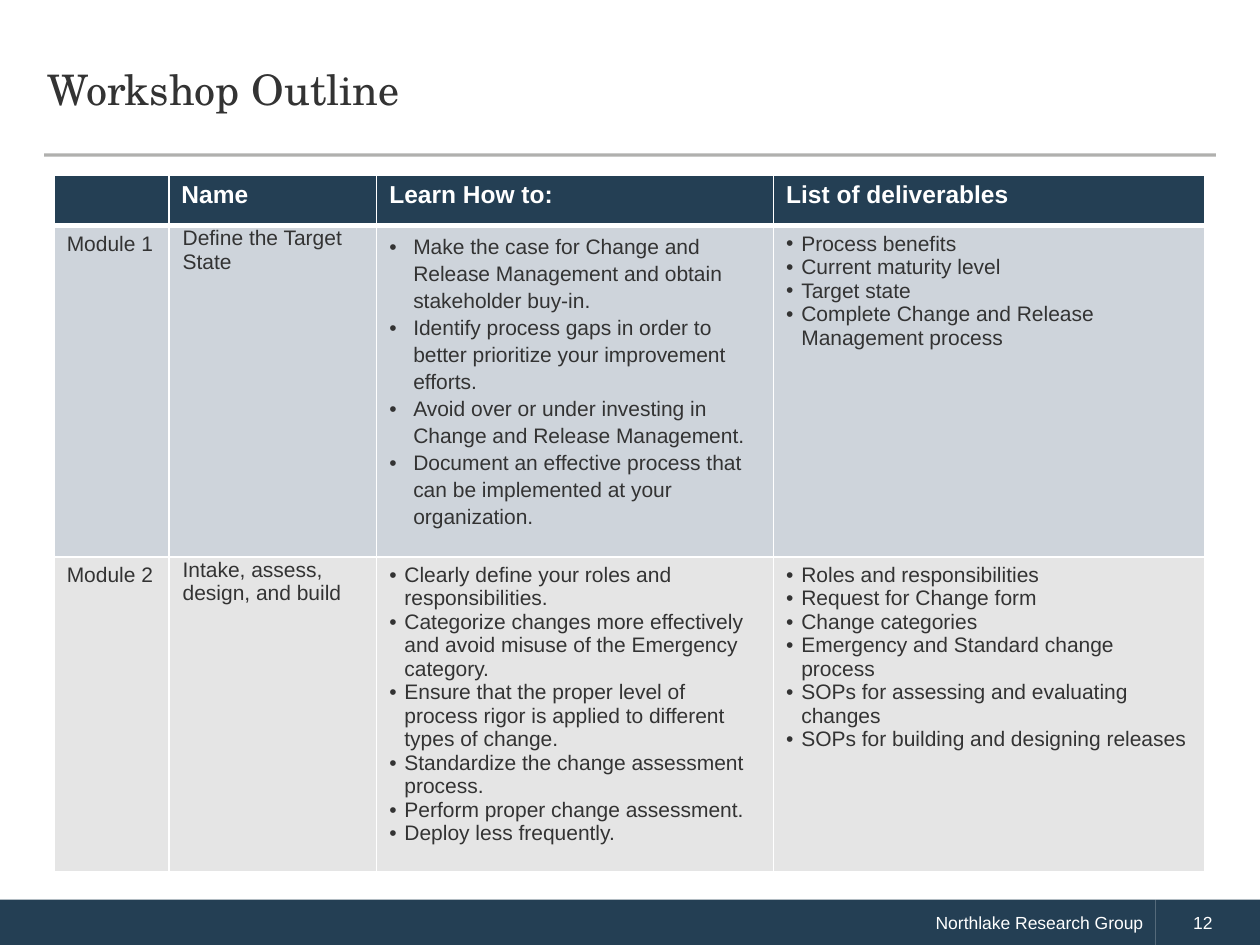
from lxml.etree import SubElement
from pptx import Presentation
from pptx.dml.color import RGBColor
from pptx.enum.shapes import MSO_CONNECTOR, MSO_SHAPE
from pptx.enum.text import MSO_ANCHOR, PP_ALIGN
from pptx.oxml.ns import qn
from pptx.util import Inches, Pt

COLORS = {
    "navy": "243F54",
    "white": "FFFFFF",
    "text": "333333",
    "rule": "45433E",
    "module 1": "CED4DB",
    "module 2": "E5E5E5",
}
BODY_FONT = "Arial"
TITLE_FONT = "TeX Gyre Schola"

COLUMN_WIDTHS = [0.91, 1.65, 3.15, 3.42]
ROW_HEIGHTS = [0.4, 2.46, 2.33]
HEADINGS = ["", "Name", "Learn How to:", "List of deliverables"]
MODULES = [
    {
        "label": "Module 1",
        "name": "Define the Target State",
        "fill": "module 1",
        "lessons": [
            "Make the case for Change and Release Management and obtain stakeholder buy-in.",
            "Identify process gaps in order to better prioritize your improvement efforts.",
            "Avoid over or under investing in Change and Release Management.",
            "Document an effective process that can be implemented at your organization.",
        ],
        "lesson_style": {"indent": 0.19, "line_spacing": 1.15},
        "deliverables": [
            "Process benefits",
            "Current maturity level",
            "Target state",
            "Complete Change and Release Management process",
        ],
    },
    {
        "label": "Module 2",
        "name": "Intake, assess, design, and build",
        "fill": "module 2",
        "lessons": [
            "Clearly define your roles and responsibilities.",
            "Categorize changes more effectively and avoid misuse of the Emergency category.",
            "Ensure that the proper level of process rigor is applied to different types of change.",
            "Standardize the change assessment process.",
            "Perform proper change assessment.",
            "Deploy less frequently.",
        ],
        "lesson_style": {},
        "deliverables": [
            "Roles and responsibilities",
            "Request for Change form",
            "Change categories",
            "Emergency and Standard change process",
            "SOPs for assessing and evaluating changes",
            "SOPs for building and designing releases",
        ],
    },
]


def rgb(name):
    return RGBColor.from_string(COLORS[name])


def format_text(frame, size, color, font=BODY_FONT, bold=False):
    for paragraph in frame.paragraphs:
        for run in paragraph.runs:
            run.font.name = font
            run.font.size = Pt(size)
            run.font.bold = bold
            run.font.color.rgb = rgb(color)


def add_title(slide, title):
    frame = slide.shapes.add_textbox(
        Inches(0.28), Inches(0.29), Inches(9.43), Inches(0.87)).text_frame
    frame.word_wrap = True
    frame.vertical_anchor = MSO_ANCHOR.MIDDLE
    frame.text = title
    frame.paragraphs[0].line_spacing = Pt(26)
    format_text(frame, 24, "text", TITLE_FONT)


def add_rule(slide):
    """Draw the translucent line under the title."""
    rule = slide.shapes.add_connector(
        MSO_CONNECTOR.STRAIGHT, Inches(0.35), Inches(1.23), Inches(9.65), Inches(1.23))
    rule.line.width = Pt(1.75)
    rule.line.color.rgb = rgb("rule")
    color = rule.line._get_or_add_ln().find(".//" + qn("a:srgbClr"))
    SubElement(color, qn("a:alpha"), val="42000")
    SubElement(rule._element.spPr, qn("a:effectLst"))


def add_footer_part(slide, left, width, text, alignment, indent=0):
    bar = slide.shapes.add_shape(
        MSO_SHAPE.RECTANGLE, Inches(left), Inches(7.14), Inches(width), Inches(0.36))
    bar.shadow.inherit = False
    bar.fill.solid()
    bar.fill.fore_color.rgb = rgb("navy")
    bar.line.fill.background()
    frame = bar.text_frame
    frame.vertical_anchor = MSO_ANCHOR.MIDDLE
    frame.margin_left = Inches(0.1 + indent)
    frame.text = text
    frame.paragraphs[0].alignment = alignment
    format_text(frame, 10, "white")


def set_borders(cell, top=1, bottom=1):
    properties = cell._tc.get_or_add_tcPr()
    for side, width in (("L", 1), ("R", 1), ("T", top), ("B", bottom)):
        line = SubElement(properties, qn(f"a:ln{side}"), w=str(Pt(width)))
        fill = SubElement(line, qn("a:solidFill"))
        SubElement(fill, qn("a:srgbClr"), val=COLORS["white"])


def fill_cell(cell, text, fill, size=12, color="text", bold=False, **borders):
    set_borders(cell, **borders)
    cell.fill.solid()
    cell.fill.fore_color.rgb = rgb(fill)
    cell.text_frame.text = text
    format_text(cell.text_frame, size, color, bold=bold)


def add_bullets(cell, indent=0.12, line_spacing=None):
    for paragraph in cell.text_frame.paragraphs:
        paragraph.line_spacing = line_spacing
        properties = paragraph._p.get_or_add_pPr()
        properties.set("marL", str(Inches(indent)))
        properties.set("indent", str(-Inches(indent)))
        SubElement(properties, qn("a:buFont"), typeface=BODY_FONT)
        SubElement(properties, qn("a:buChar"), char="•")


def add_outline_table(slide):
    table = slide.shapes.add_table(
        len(ROW_HEIGHTS), len(COLUMN_WIDTHS), Inches(0.43), Inches(1.39),
        Inches(sum(COLUMN_WIDTHS)), Inches(sum(ROW_HEIGHTS))).table
    for column, width in zip(table.columns, COLUMN_WIDTHS):
        column.width = Inches(width)
    for row, height in zip(table.rows, ROW_HEIGHTS):
        row.height = Inches(height)

    for column, heading in enumerate(HEADINGS):
        fill_cell(table.cell(0, column), heading, "navy", 14, "white", bold=True, bottom=3)

    for row, module in enumerate(MODULES, start=1):
        texts = [module["label"], module["name"],
                 "\n".join(module["lessons"]), "\n".join(module["deliverables"])]
        cells = [table.cell(row, column) for column in range(len(texts))]
        for cell, text in zip(cells, texts):
            fill_cell(cell, text, module["fill"], top=3 if row == 1 else 1)
        _, name, lessons, deliverables = cells
        name.margin_left = Inches(0.11)
        name.margin_top = name.margin_right = Inches(0.01)
        name.margin_bottom = 0
        add_bullets(lessons, **module["lesson_style"])
        add_bullets(deliverables)


def main():
    presentation = Presentation()
    presentation.slide_width = Inches(10)
    presentation.slide_height = Inches(7.5)
    slide = presentation.slides.add_slide(presentation.slide_layouts[6])
    add_footer_part(slide, 0, 9.17, "Northlake Research Group", PP_ALIGN.RIGHT)
    add_footer_part(slide, 9.17, 0.83, "12", PP_ALIGN.LEFT, indent=0.2)
    add_rule(slide)
    add_title(slide, "Workshop Outline")
    add_outline_table(slide)
    presentation.save("out.pptx")


if __name__ == "__main__":
    main()
